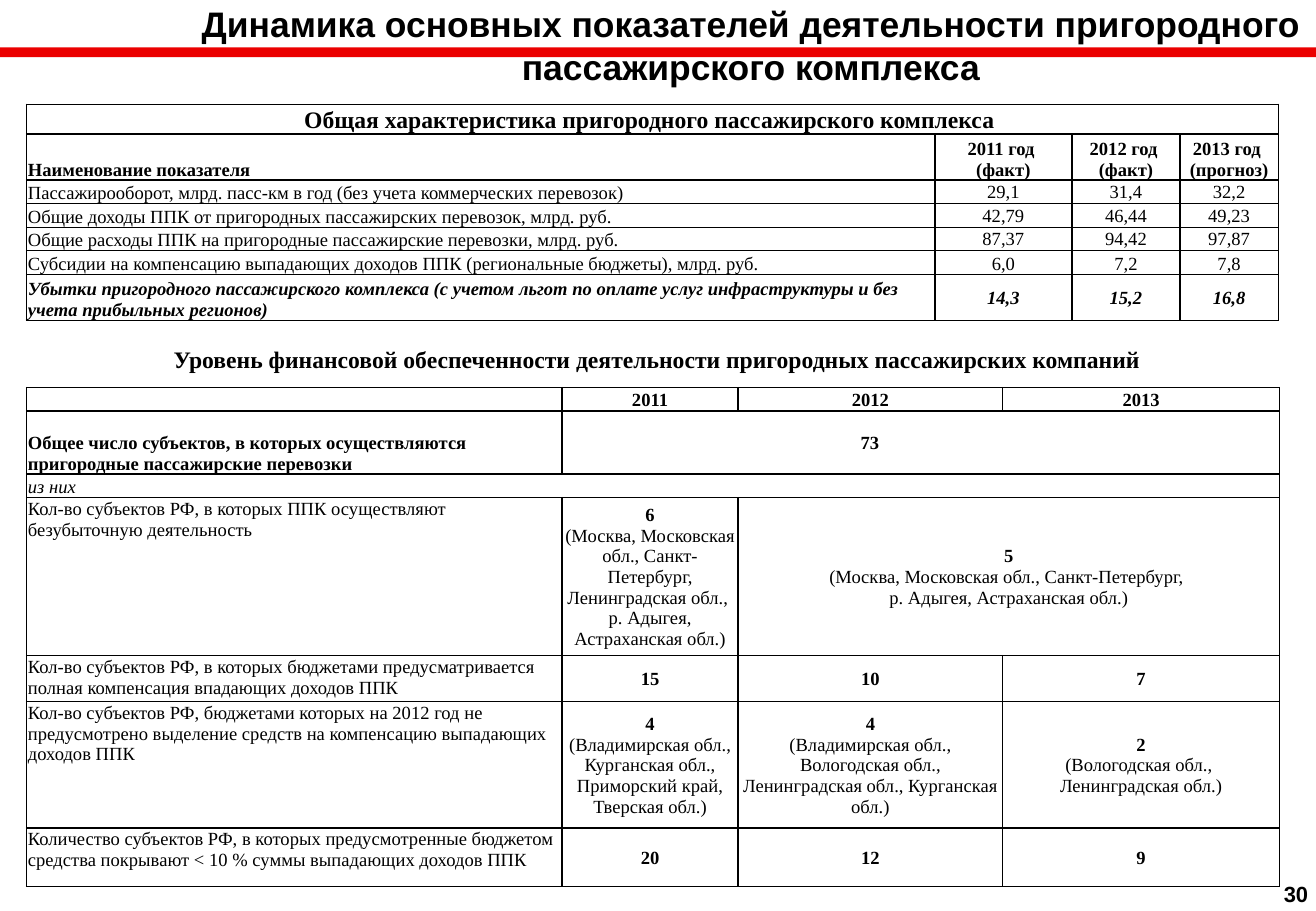
from lxml.etree import SubElement
from pptx import Presentation
from pptx.dml.color import RGBColor
from pptx.enum.shapes import MSO_SHAPE
from pptx.enum.text import MSO_ANCHOR, PP_ALIGN
from pptx.oxml import parse_xml
from pptx.oxml.ns import nsdecls, qn
from pptx.util import Inches, Pt

COLOURS = {"text": "000000", "border": "000000", "bar": "EB0000"}
SERIF, SANS = "Times New Roman", "Arial"
TOP, MIDDLE, BOTTOM = MSO_ANCHOR.TOP, MSO_ANCHOR.MIDDLE, MSO_ANCHOR.BOTTOM
BODY_SIZE = 11
TOTAL_INDENT = 2.45

STYLES = {
    "heading": {"size": 14, "bold": True},
    "bold": {"bold": True},
    "plain": {"bold": False},
    "italic": {"bold": False, "italic": True},
    "loss": {"bold": True, "italic": True},
}

TEXTS = [
    ((1.09, -0.03, 10.19, 0.81), True, {"name": SANS, "size": 21, "bold": True},
     "Динамика основных показателей деятельности пригородного пассажирского комплекса"),
    ((0.23, 2.79, 10.37, 0.34), True, {"name": SERIF, "size": 14, "bold": True},
     "Уровень финансовой обеспеченности деятельности пригородных пассажирских компаний"),
    ((10.47, 7.2, 0.41, 0.32), False, {"name": SANS, "size": 13, "bold": True}, "30"),
]

# Each row: height, label style, value style, label anchor, value anchor, cells (None continues a merge)
OVERVIEW = {
    "position": (0.22, 0.86),
    "columns": [7.48, 1.13, 0.89, 0.81],
    "rows": [
        (0.24, "heading", "heading", BOTTOM, BOTTOM,
         ["Общая характеристика пригородного пассажирского комплекса ", None, None, None]),
        (0.38, "bold", "bold", BOTTOM, BOTTOM,
         ["Наименование показателя", "2011 год \n(факт)", "2012 год \n(факт)", "2013 год \n(прогноз)"]),
        (0.19, "plain", "plain", BOTTOM, MIDDLE,
         ["Пассажирооборот, млрд. пасс-км в год (без учета коммерческих перевозок)",
          "29,1", "31,4", "32,2"]),
        (0.19, "plain", "plain", BOTTOM, MIDDLE,
         ["Общие доходы ППК от пригородных пассажирских перевозок, млрд. руб.",
          "42,79", "46,44", "49,23"]),
        (0.19, "plain", "plain", BOTTOM, MIDDLE,
         ["Общие расходы ППК на пригородные пассажирские перевозки, млрд. руб.",
          "87,37", "94,42", "97,87"]),
        (0.19, "plain", "plain", BOTTOM, BOTTOM,
         ["Субсидии на компенсацию выпадающих доходов ППК (региональные бюджеты), млрд. руб.",
          "6,0", "7,2", "7,8"]),
        (0.38, "loss", "loss", BOTTOM, MIDDLE,
         ["Убытки пригородного пассажирского комплекса (с учетом льгот по оплате услуг "
          "инфраструктуры и без учета прибыльных регионов)", "14,3", "15,2", "16,8"]),
    ],
}

FUNDING = {
    "position": (0.22, 3.19),
    "columns": [4.41, 1.45, 2.18, 2.28],
    "rows": [
        (0.19, "bold", "bold", BOTTOM, BOTTOM, ["", "2011", "2012", "2013"]),
        (0.52, "bold", "bold", BOTTOM, MIDDLE,
         ["Общее число субъектов, в которых осуществляются пригородные пассажирские перевозки",
          "73", None, None]),
        (0.19, "italic", "italic", BOTTOM, BOTTOM, ["из них", None, None, None]),
        (1.3, "plain", "lead", TOP, MIDDLE,
         ["Кол-во субъектов РФ, в которых ППК осуществляют безубыточную деятельность",
          "6\n(Москва, Московская обл., Санкт-Петербург, Ленинградская обл., \n"
          "р. Адыгея, Астраханская обл.)",
          "5\n(Москва, Московская обл., Санкт-Петербург, \nр. Адыгея, Астраханская обл.)", None]),
        (0.38, "plain", "lead", TOP, MIDDLE,
         ["Кол-во субъектов РФ, в которых бюджетами предусматривается полная компенсация "
          "впадающих доходов ППК", "15", "10", "7"]),
        (1.04, "plain", "lead", TOP, MIDDLE,
         ["Кол-во субъектов РФ, бюджетами которых на 2012 год не предусмотрено выделение "
          "средств на компенсацию выпадающих доходов ППК",
          "4\n(Владимирская обл., Курганская обл., Приморский край, Тверская обл.)",
          "4\n(Владимирская обл., Вологодская обл., Ленинградская обл., Курганская обл.)",
          "2\n(Вологодская обл., \nЛенинградская обл.)"]),
        (0.48, "plain", "lead", TOP, MIDDLE,
         ["Количество субъектов РФ, в которых предусмотренные бюджетом средства покрывают "
          "< 10 % суммы выпадающих доходов ППК", "20", "12", "9"]),
    ],
}


def set_font(font, values):
    """Apply a dict of font values."""
    for name, value in values.items():
        setattr(font, name, Pt(value) if name == "size" else value)
    font.color.rgb = RGBColor.from_string(COLOURS["text"])


def write_lines(paragraph, text, style):
    """Write text with line breaks; the lead style makes only its first line bold."""
    for index, line in enumerate(text.split("\n")):
        if index:
            paragraph.add_line_break()
        run = paragraph.add_run()
        run.text = line
        name = ("plain" if index else "bold") if style == "lead" else style
        set_font(run.font, {"name": SERIF, "size": BODY_SIZE, **STYLES[name]})
    for line_break in paragraph._p.findall(qn("a:br")):
        SubElement(line_break, qn("a:rPr"), sz=str(BODY_SIZE * 100))


def format_cell(cell, anchor):
    """Give a cell its margins, anchor, clear fill and four borders."""
    values = {"margin_left": Inches(0.01), "margin_right": Inches(0.01),
              "margin_top": Inches(0.01), "margin_bottom": 0, "vertical_anchor": anchor}
    for name, value in values.items():
        setattr(cell, name, value)
    cell.fill.background()
    properties = cell._tc.get_or_add_tcPr()
    for index, side in enumerate("LRTB"):
        properties.insert(index, parse_xml(
            f'<a:ln{side} {nsdecls("a")} w="{Pt(1)}"><a:solidFill>'
            f'<a:srgbClr val="{COLOURS["border"]}"/></a:solidFill></a:ln{side}>'))


def add_grid(slide, content):
    """Add a bordered table and merge its continued cells."""
    rows, columns = content["rows"], content["columns"]
    left, top = content["position"]
    bounds = (left, top, sum(columns), sum(row[0] for row in rows))
    table = slide.shapes.add_table(len(rows), len(columns), *map(Inches, bounds)).table
    for column, width in zip(table.columns, columns):
        column.width = Inches(width)
    for row_index, (height, label_style, value_style, label_anchor, value_anchor, texts) in enumerate(rows):
        table.rows[row_index].height = Inches(height)
        for column_index, text in enumerate(texts):
            cell = table.cell(row_index, column_index)
            is_label = column_index == 0
            format_cell(cell, label_anchor if is_label else value_anchor)
            paragraph = cell.text_frame.paragraphs[0]
            if not text:
                SubElement(paragraph._p, qn("a:endParaRPr"), sz=str(BODY_SIZE * 100))
                continue
            style = label_style if is_label else value_style
            write_lines(paragraph, text, style)
            centred = not is_label or style == "heading"
            paragraph.alignment = PP_ALIGN.CENTER if centred else PP_ALIGN.LEFT
            if text == "73":
                paragraph.alignment = PP_ALIGN.LEFT
                paragraph._p.get_or_add_pPr().set("marL", str(Inches(TOTAL_INDENT)))
            last = column_index
            while last + 1 < len(texts) and texts[last + 1] is None:
                last += 1
            if last > column_index:
                cell.merge(table.cell(row_index, last))


def add_text(slide, bounds, wrap, font, text):
    """Add a centred text box."""
    frame = slide.shapes.add_textbox(*map(Inches, bounds)).text_frame
    frame.word_wrap = wrap
    paragraph = frame.paragraphs[0]
    paragraph.alignment = PP_ALIGN.CENTER
    run = paragraph.add_run()
    run.text = text
    set_font(run.font, font)


def main():
    """Build and save the slide."""
    presentation = Presentation()
    presentation.slide_width, presentation.slide_height = Inches(10.84), Inches(7.5)
    slide = presentation.slides.add_slide(presentation.slide_layouts[6])
    bar = slide.shapes.add_shape(MSO_SHAPE.RECTANGLE, *map(Inches, (0, 0.39, 10.84, 0.08)))
    bar.shadow.inherit = False
    bar.fill.solid()
    bar.fill.fore_color.rgb = RGBColor.from_string(COLOURS["bar"])
    bar.line.fill.background()
    for entry in TEXTS:
        add_text(slide, *entry)
    for content in (OVERVIEW, FUNDING):
        add_grid(slide, content)
    presentation.save("out.pptx")


if __name__ == "__main__":
    main()
